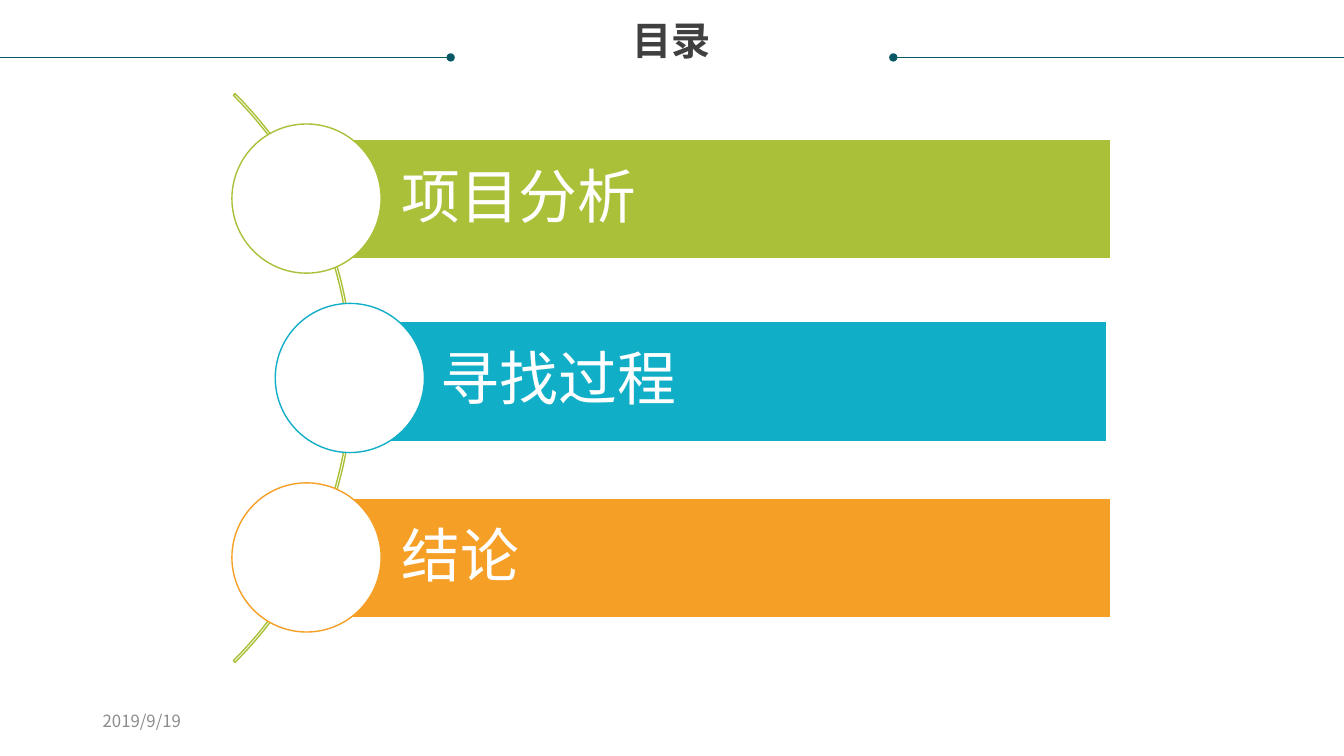
from pptx import Presentation
from pptx import util as u
from pptx.dml.color import RGBColor
from pptx.enum import shapes, text
from pptx.oxml.ns import qn
from lxml import etree

SANS = "Noto Sans CJK SC"
WHITE, TEAL, GREEN = "FFFFFF", "085764", "A9C038"


def tint(part, code):
    """Give a fill or line a solid colour."""
    part.fill.solid() if hasattr(part, "width") else part.solid()
    fill = part.fill if hasattr(part, "width") else part
    fill.fore_color.rgb = RGBColor.from_string(code)


def write(frame, words, size, code, font=SANS, bold=False):
    """Add one run to the first paragraph and return the paragraph."""
    frame.word_wrap = True
    para = frame.paragraphs[0]
    run = para.add_run()
    run.text = words
    run.font.size, run.font.name, run.font.bold = u.Pt(size), font, bold
    tint(run.font.fill, code)
    east = etree.SubElement(run.font._element, qn("a:ea"))
    east.set("typeface", SANS)
    return para


deck = Presentation()
deck.slide_width, deck.slide_height = u.Inches(13.33), u.Inches(7.5)
wide = 13.33
slide = deck.slides.add_slide(deck.slide_layouts[6])
items = slide.shapes

# Title
title = items.add_textbox(*map(u.Inches, (0.25, 0.21, wide - 0.5, 0.85))).text_frame
title.margin_left = title.margin_right = title.margin_top = title.margin_bottom = 0
para = write(title, "目录", 28, "404040", bold=True)
para.alignment, para.line_spacing = text.PP_ALIGN.CENTER, 0.9

# Rules beside the title, each with a dot at its inner end
for edge, dot in ((0, 4.47), (wide, wide - 4.47)):
    rule = items.add_connector(shapes.MSO_CONNECTOR.STRAIGHT,
                               *map(u.Inches, (edge, 0.57, dot, 0.57)))
    rule.line.width = u.Pt(0.5)
    tint(rule.line, TEAL)
    end = etree.SubElement(rule.line._get_or_add_ln(), qn("a:tailEnd"))
    end.set("type", "oval")
    etree.SubElement(rule._element.spPr, qn("a:effectLst"))

# Date
date = items.add_textbox(*map(u.Inches, (0.92, 6.95, 3, 0.4))).text_frame
date.vertical_anchor = text.MSO_ANCHOR.MIDDLE
write(date, "2019/9/19", 12, "8C8C8C")

# Arc behind the list
arc = items.add_shape(shapes.MSO_SHAPE.BLOCK_ARC,
                      *map(u.Inches, (-4.48, -0.24, 7.98, 7.98)))
for spot, value in enumerate((189, 27, 0.003)):
    arc.adjustments[spot] = value
arc.shadow.inherit = False
arc.fill.background()
arc.line.width = u.Pt(1)
tint(arc.line, GREEN)

# List: a bar with text and a disc on its left end
high, disc = 1.19, 1.48
rows = (("项目分析", GREEN, 3.04, 1.38, 7.98, 2.3),
        ("寻找过程", "11AEC7", 3.43, 3.19, 7.55, 2.73),
        ("结论", "F59F26", 3.04, 4.94, 7.98, 2.3))
for row, (words, code, left, top, long, side) in enumerate(rows):
    bar = items.add_shape(shapes.MSO_SHAPE.RECTANGLE,
                          *map(u.Inches, (left, top, long, high)))
    ring = items.add_shape(shapes.MSO_SHAPE.OVAL,
                           *map(u.Inches, (side, 1.23 + 1.78 * row, disc, disc)))
    for shape, fill, line in ((bar, code, WHITE), (ring, WHITE, code)):
        shape.shadow.inherit = False
        tint(shape.fill, fill)
        shape.line.width = u.Pt(1)
        tint(shape.line, line)
    frame = bar.text_frame
    frame.margin_left = u.Inches(0.94)
    frame.margin_right = frame.margin_top = frame.margin_bottom = u.Inches(0.12)
    frame.vertical_anchor = text.MSO_ANCHOR.MIDDLE
    para = write(frame, words, 42, WHITE, "Cabin")
    para.alignment, para.line_spacing = text.PP_ALIGN.LEFT, 0.9
    para.space_after = u.Pt(0.35 * 42)

deck.save("out.pptx")
